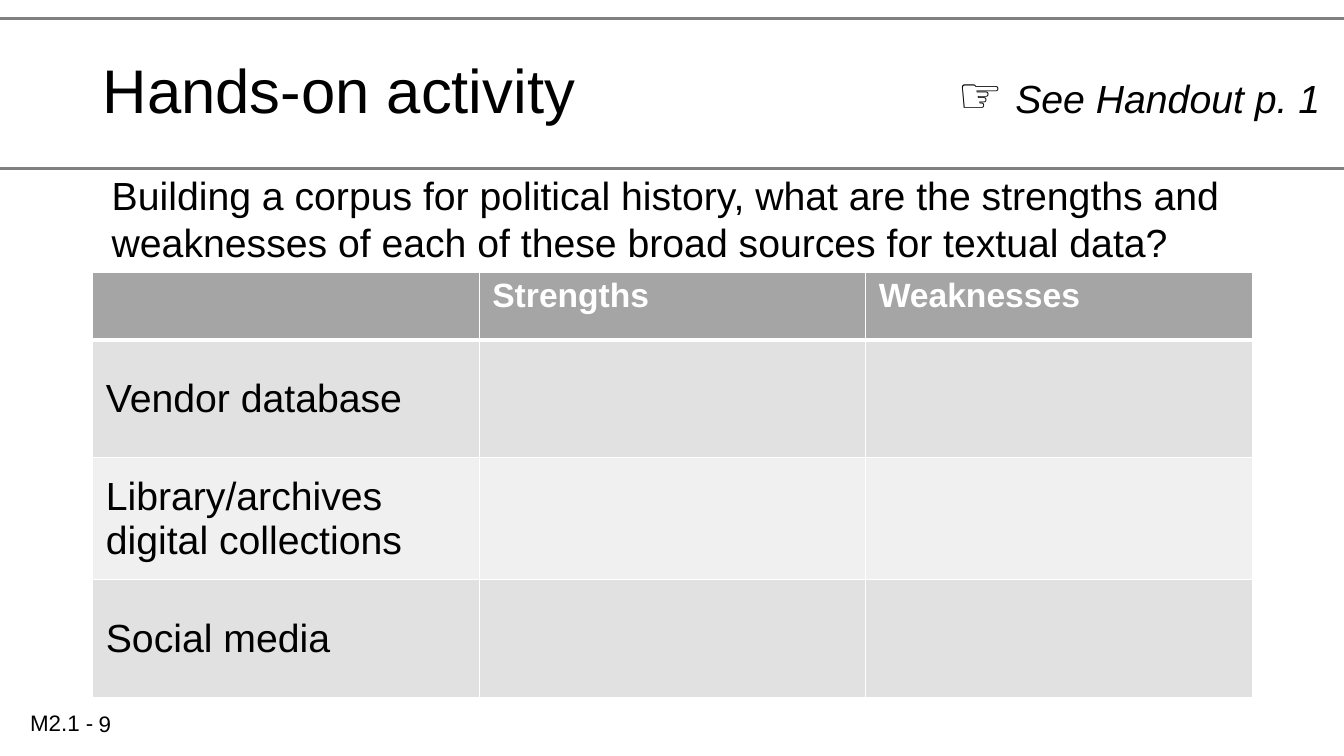
from lxml.etree import SubElement
from pptx import Presentation
from pptx.dml.color import RGBColor
from pptx.enum.shapes import MSO_CONNECTOR
from pptx.enum.text import MSO_ANCHOR as Anchor
from pptx.oxml import parse_xml
from pptx.oxml.ns import nsdecls, qn
from pptx.util import Inches, Pt

WIDTH, HEIGHT = 13.33, 7.5
BLACK, WHITE, GRAY = "000000", "FFFFFF", "808080"
HEADER_FILL, BAND_FILLS = "A5A5A5", ("E1E1E1", "F0F0F0")

RULE_TOPS = (0.18, 1.67)
QUESTION = ("Building a corpus for political history, what are the strengths and "
            "weaknesses of each of these broad sources for textual data?")
TEXTS = [
    {"at": (0.2, 6.99, 0.98, 0.37), "runs": [("M2.1 -", {"size": 16})]},
    {"at": (0.92, 0.2, 11.5, 1.45), "runs": [("Hands-on activity", {"size": 44})],
     "anchor": Anchor.MIDDLE, "spacing": 0.9},
    {"at": (1.01, 1.65, 11.4, 1.04), "runs": [(QUESTION, {"size": 28})]},
    {"at": (9.4, 0.58, 3.86, 0.71), "wrap": False,
     "runs": [("☞", {"size": 36}), (" ", {"size": 32}),
              ("See Handout p. 1", {"size": 28, "italic": True})]},
    {"at": (0.88, 6.98, 3, 0.4), "runs": [("9", {"size": 16})],
     "anchor": Anchor.MIDDLE},
]
SOURCES = [
    ("", "Strengths", "Weaknesses"),
    ("Vendor database", "", ""),
    ("Library/archives digital collections", "", ""),
    ("Social media", "", ""),
]
TABLE_AT = (0.92, 2.7, 11.5, 4.22)
ROW_HEIGHTS = (0.67, 1.17, 1.21, 1.17)
HEADER_FORMAT = {"size": 24, "bold": True, "color": WHITE}
BODY_FORMAT = {"size": 28, "bold": False}


def rgb(color):
    return RGBColor.from_string(color)


def add_run(paragraph, words, style):
    run = paragraph.add_run()
    run.text = words
    values = {"name": "Arial", "color": BLACK, **style}
    run.font.color.rgb = rgb(values.pop("color"))
    values["size"] = Pt(values["size"])
    for key, value in values.items():
        setattr(run.font, key, value)


def add_text(slide, at, runs, anchor=Anchor.TOP, spacing=None, wrap=True):
    frame = slide.shapes.add_textbox(*map(Inches, at)).text_frame
    frame.word_wrap = wrap
    frame.vertical_anchor = anchor
    paragraph = frame.paragraphs[0]
    if spacing:
        paragraph.line_spacing = spacing
    for words, style in runs:
        add_run(paragraph, words, style)


def add_rule(slide, top):
    rule = slide.shapes.add_connector(
        MSO_CONNECTOR.STRAIGHT, 0, Inches(top), Inches(WIDTH), Inches(top))
    rule.line.color.rgb = rgb(GRAY)
    rule.line.width = Pt(2.25)
    SubElement(rule._element.spPr, qn("a:effectLst"))


def set_borders(cell, widths):
    properties = cell._tc.get_or_add_tcPr()
    for position, (side, points) in enumerate(widths.items()):
        properties.insert(position, parse_xml(
            f'<a:ln{side} {nsdecls("a")} w="{Pt(points)}"><a:solidFill>'
            f'<a:srgbClr val="{WHITE}"/></a:solidFill></a:ln{side}>'))


def add_sources(slide):
    table = slide.shapes.add_table(
        len(SOURCES), len(SOURCES[0]), *map(Inches, TABLE_AT)).table
    for column in table.columns:
        column.width = Inches(TABLE_AT[2] / len(SOURCES[0]))
    for r, (labels, height) in enumerate(zip(SOURCES, ROW_HEIGHTS)):
        table.rows[r].height = Inches(height)
        header = r == 0
        for c, label in enumerate(labels):
            cell = table.cell(r, c)
            cell.fill.solid()
            cell.fill.fore_color.rgb = rgb(
                HEADER_FILL if header else BAND_FILLS[(r - 1) % 2])
            cell.margin_left = cell.margin_right = Inches(0.13)
            cell.vertical_anchor = Anchor.TOP if header else Anchor.MIDDLE
            set_borders(cell, {"L": 1, "R": 1, "T": 3 if r == 1 else 1,
                               "B": 3 if header else 1})
            if label:
                add_run(cell.text_frame.paragraphs[0], label,
                        HEADER_FORMAT if header else BODY_FORMAT)


def main():
    deck = Presentation()
    deck.slide_width, deck.slide_height = Inches(WIDTH), Inches(HEIGHT)
    slide = deck.slides.add_slide(deck.slide_layouts[6])
    for top in RULE_TOPS:
        add_rule(slide, top)
    add_sources(slide)
    for text in TEXTS:
        add_text(slide, **text)
    deck.save("out.pptx")


if __name__ == "__main__":
    main()
